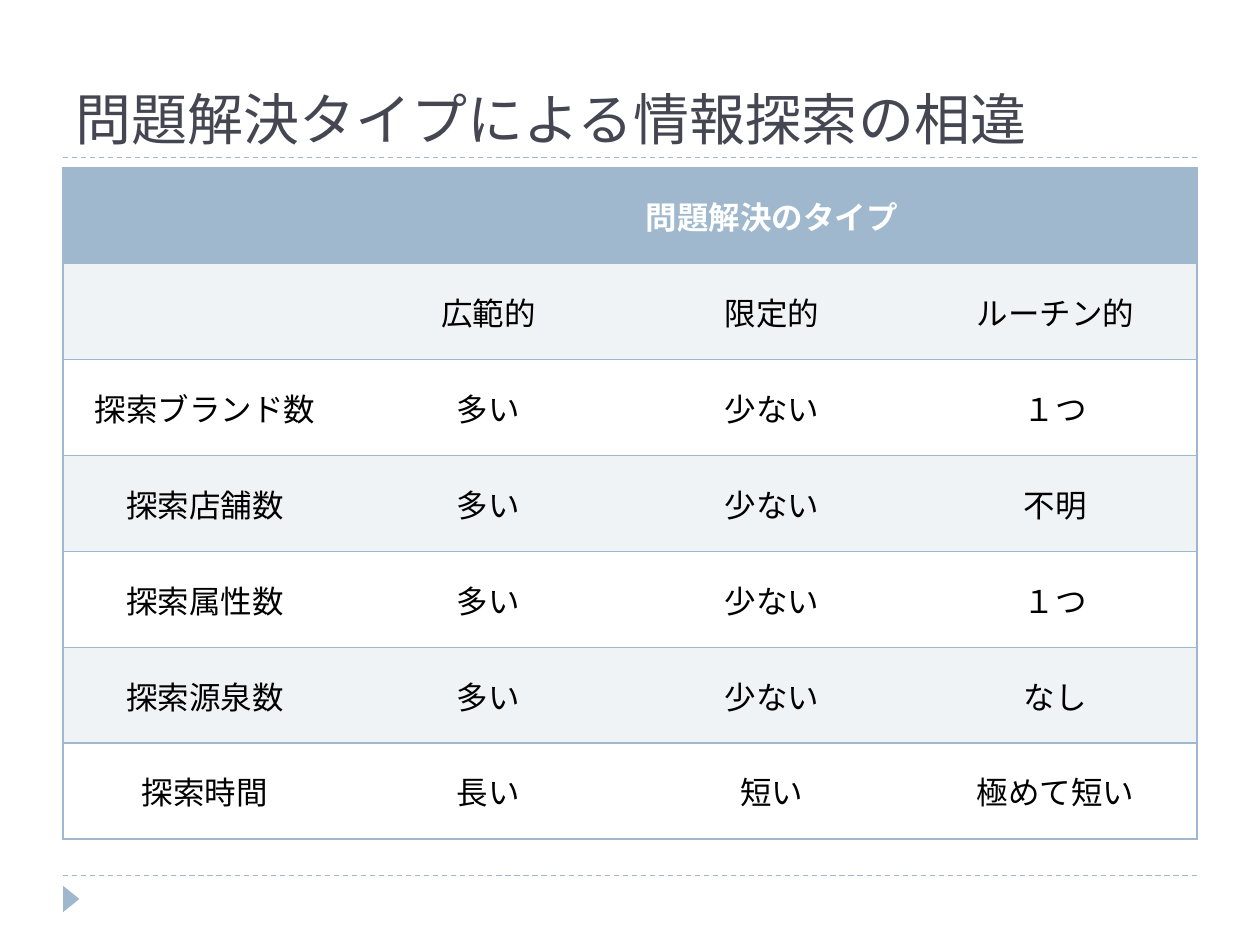
from pptx import Presentation
from pptx.dml.color import RGBColor
from pptx.enum.dml import MSO_LINE
from pptx.enum.lang import MSO_LANGUAGE_ID
from pptx.enum.shapes import MSO_CONNECTOR, MSO_SHAPE
from pptx.enum.text import MSO_ANCHOR, PP_ALIGN
from pptx.oxml.ns import qn
from pptx.util import Inches, Pt
from lxml.etree import SubElement

COLS, ROWS = 100, 75
WIDE, HIGH = Inches(10), Inches(7.5)
HUES = {"rule": "9FB8CD", "title": "464653", "band": "F0F3F6",
        "white": "FFFFFF", "black": "000000"}
TITLE = "問題解決タイプによる情報探索の相違"
DATA = [
    ["", "問題解決のタイプ", "", ""],
    ["", "広範的", "限定的", "ルーチン的"],
    ["探索ブランド数", "多い", "少ない", "１つ"],
    ["探索店舗数", "多い", "少ない", "不明"],
    ["探索属性数", "多い", "少ない", "１つ"],
    ["探索源泉数", "多い", "少ない", "なし"],
    ["探索時間", "長い", "短い", "極めて短い"],
]


def hue(name):
    return RGBColor.from_string(HUES[name])


def grid(x, y, w, h):
    """Turn columns and rows of the slide grid into lengths."""
    return (round(x * WIDE / COLS), round(y * HIGH / ROWS),
            round(w * WIDE / COLS), round(h * HIGH / ROWS))


def write(frame, text, color, **form):
    run = frame.paragraphs[0].add_run()
    run.text = text
    form["language_id"] = MSO_LANGUAGE_ID.JAPANESE
    for key, value in form.items():
        setattr(run.font, key, value)
    run.font.color.rgb = hue(color)


def draw_rule(slide, box):
    x, y, w, h = grid(*box)
    rule = slide.shapes.add_connector(MSO_CONNECTOR.STRAIGHT, x, y, x + w, y + h)
    rule.line.color.rgb = hue("rule")
    rule.line.width = Pt(0.75)
    rule.line.dash_style = MSO_LINE.DASH
    SubElement(rule._element.spPr, qn("a:effectLst"))


def draw_title(slide, box):
    frame = slide.shapes.add_textbox(*grid(*box)).text_frame
    frame.word_wrap = True
    frame.vertical_anchor = MSO_ANCHOR.BOTTOM
    write(frame, TITLE, "title", size=Pt(32), name="Roboto Slab")


def draw_mark(slide, box):
    mark = slide.shapes.add_shape(MSO_SHAPE.ISOSCELES_TRIANGLE, *grid(*box))
    mark.rotation = 90
    mark.shadow.inherit = False
    mark.fill.solid()
    mark.fill.fore_color.rgb = hue("rule")
    mark.line.fill.background()


def edge(cell, sides):
    """Rule the given sides of a cell and clear the others."""
    props = cell._tc.get_or_add_tcPr()
    for side in "LRTB":
        line = SubElement(props, qn(f"a:ln{side}"), w=str(Pt(1)))
        if side in sides:
            fill = SubElement(line, qn("a:solidFill"))
            SubElement(fill, qn("a:srgbClr"), val=HUES["rule"])
        else:
            SubElement(line, qn("a:noFill"))


def draw_table(slide, box):
    place = grid(*box)
    table = slide.shapes.add_table(len(DATA), len(DATA[0]), *place).table
    for row in table.rows:
        row.height = place[3] // len(DATA)
    last = len(DATA[0]) - 1
    for r, row in enumerate(DATA):
        head = r == 0
        tint = "rule" if head else "band" if r % 2 else "white"
        for c, text in enumerate(row):
            cell = table.cell(r, c)
            edge(cell, "TB" + "L" * (c == 0) + "R" * (c == last or head and c > 0))
            cell.fill.solid()
            cell.fill.fore_color.rgb = hue(tint)
            cell.vertical_anchor = MSO_ANCHOR.MIDDLE
            cell.text_frame.paragraphs[0].alignment = PP_ALIGN.CENTER
            if text:
                write(cell.text_frame, text, "white" if head else "black",
                      size=Pt(18), name="Arial", bold=head)
    table.cell(0, 1).merge(table.cell(0, last))


def main():
    deck = Presentation()
    deck.slide_width, deck.slide_height = WIDE, HIGH
    slide = deck.slides.add_slide(deck.slide_layouts[6])
    left, span = 5, 90
    for y in (69.5, 12.5):
        draw_rule(slide, (left, y, span, 0))
    draw_mark(slide, (4.6, 70.7, 2.1, 1.3))
    draw_title(slide, (left, 1.7, span, 10.8))
    draw_table(slide, (left, 13.3, span, 53.3))
    deck.save("out.pptx")


if __name__ == "__main__":
    main()
